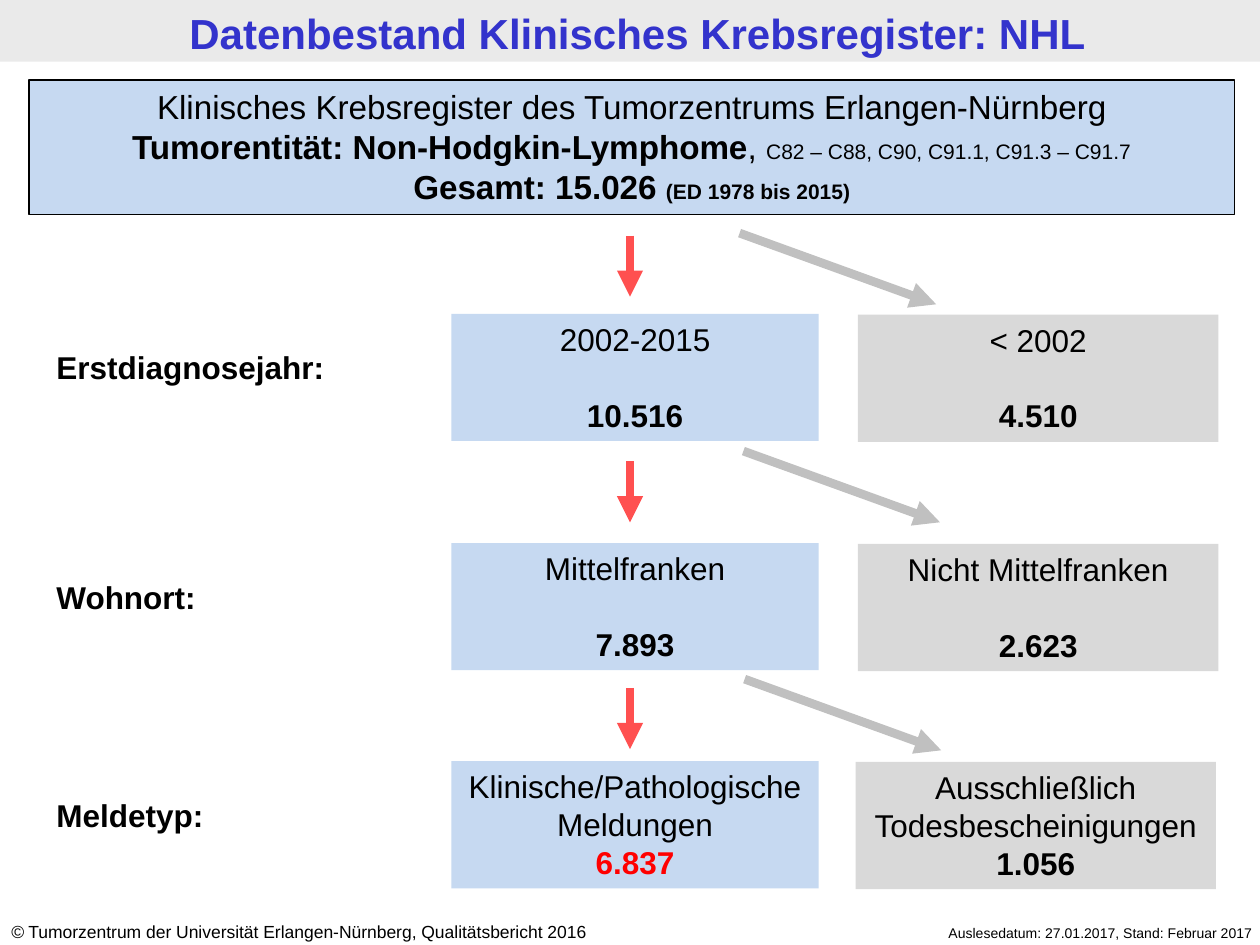
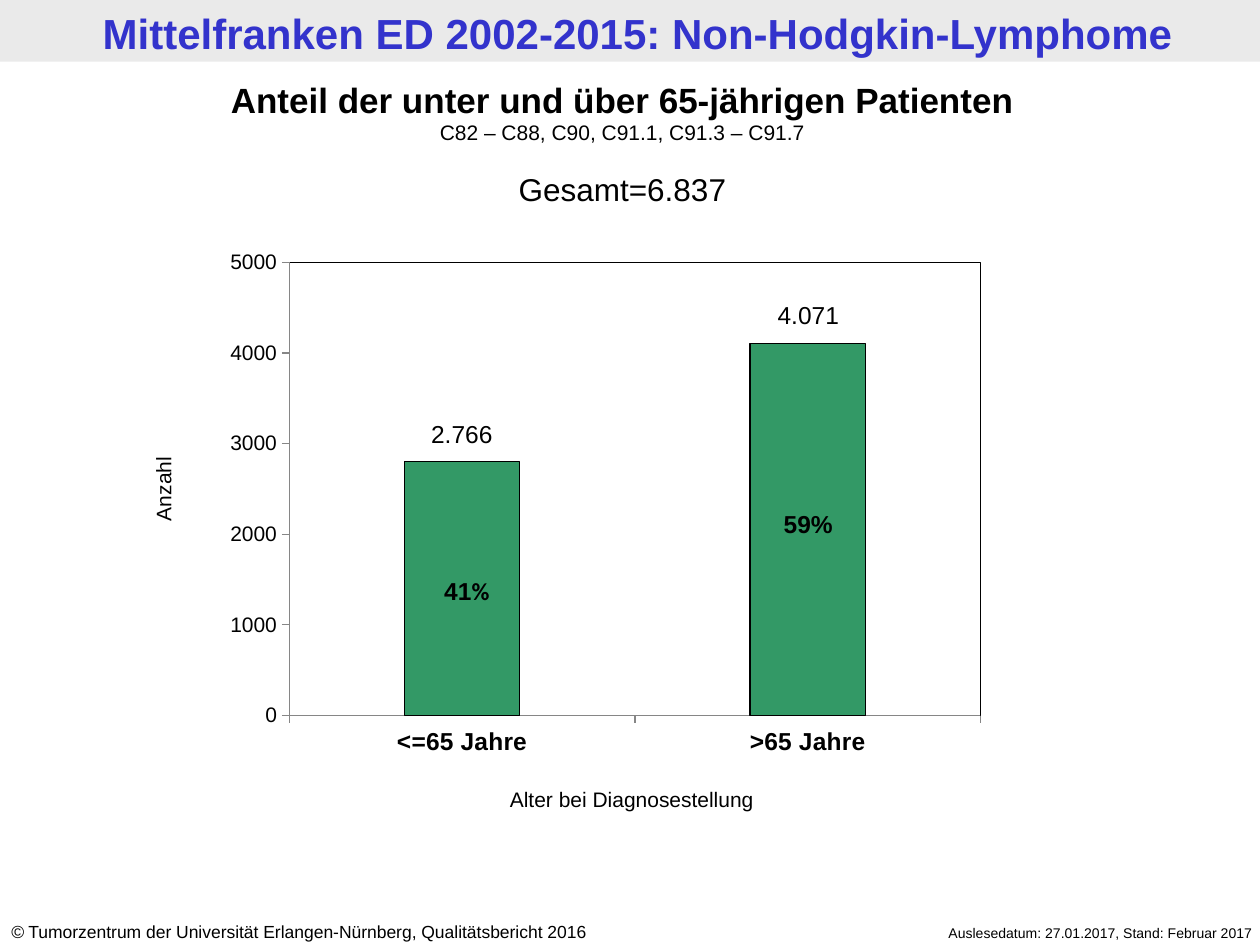
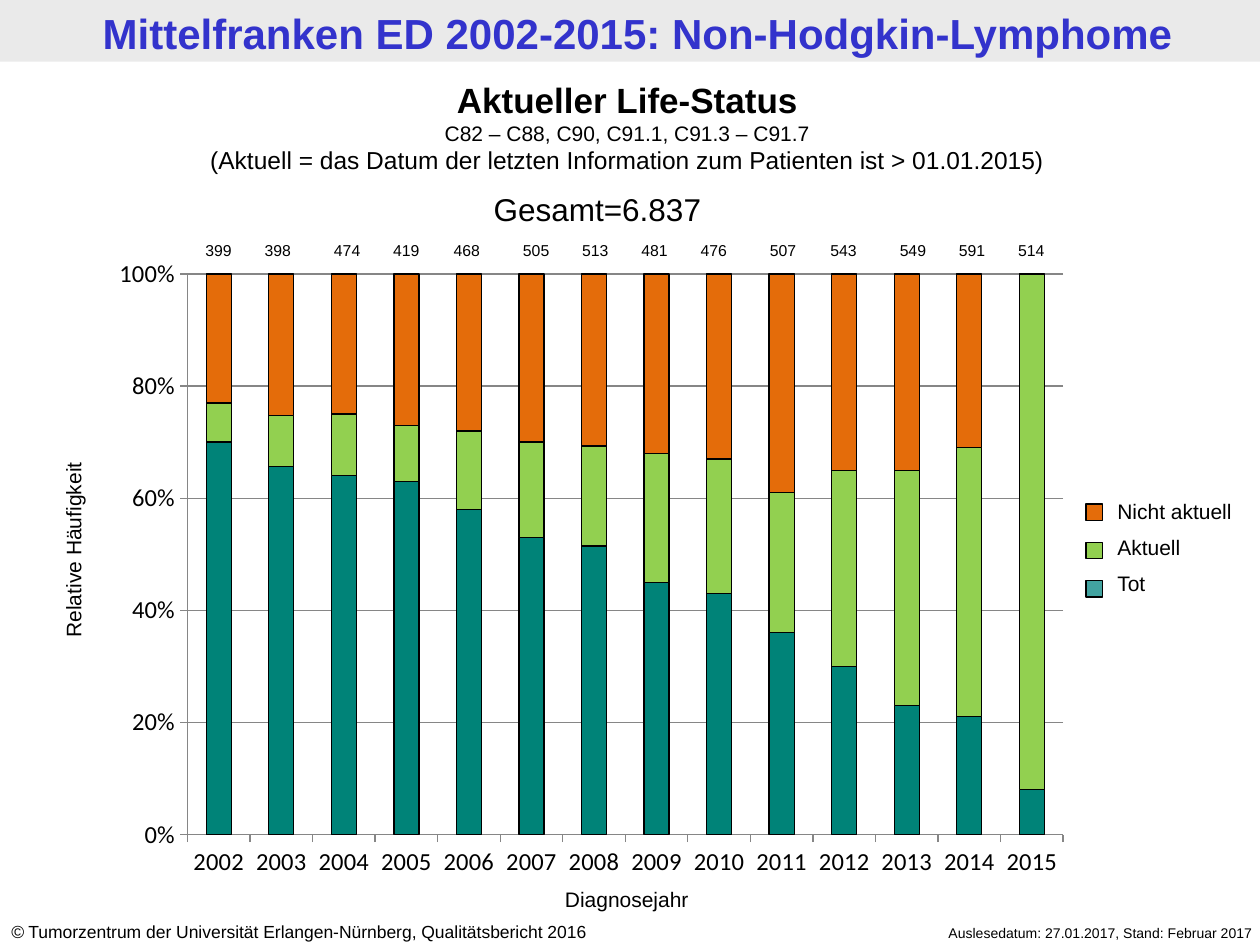
from dataclasses import dataclass
from typing import NamedTuple, Optional

from lxml.etree import SubElement
from pptx import Presentation
from pptx.chart.axis import CategoryAxis, ValueAxis
from pptx.chart.chart import Chart
from pptx.chart.data import CategoryChartData
from pptx.dml.color import RGBColor
from pptx.enum.chart import XL_CHART_TYPE as ChartType, XL_TICK_MARK as TickMark
from pptx.enum.shapes import MSO_CONNECTOR as Connector, MSO_SHAPE as Shape
from pptx.enum.text import MSO_ANCHOR as Anchor, MSO_AUTO_SIZE as AutoSize, PP_ALIGN as Align
from pptx.oxml import parse_xml
from pptx.oxml.ns import nsdecls, qn
from pptx.shapes.autoshape import Shape as Box
from pptx.slide import Slide
from pptx.util import Inches, Pt

BLACK = RGBColor(0x00, 0x00, 0x00)
RED = RGBColor(0xFF, 0x00, 0x00)
TITLE_BLUE = RGBColor(0x33, 0x33, 0xCC)
BAND_GREY = RGBColor(0xEA, 0xEA, 0xEA)
KEPT_BLUE = RGBColor(0xC6, 0xD9, 0xF1)
EXCLUDED_GREY = RGBColor(0xD9, 0xD9, 0xD9)
KEPT_ARROW = RGBColor(0xFF, 0x50, 0x50)
EXCLUDED_ARROW = RGBColor(0xC0, 0xC0, 0xC0)
AXIS_GREY = RGBColor(0x86, 0x86, 0x86)
AGE_GREEN = RGBColor(0x33, 0x99, 0x66)
DEAD_TEAL = RGBColor(0x00, 0x83, 0x78)
DEAD_KEY_TEAL = RGBColor(0x00, 0x83, 0x80)
CURRENT_GREEN = RGBColor(0x92, 0xD0, 0x50)
OUTDATED_ORANGE = RGBColor(0xE4, 0x6C, 0x0A)

ARIAL = "Arial"
CALIBRI = "Calibri"
SLIDE_WIDTH = Inches(10)
SLIDE_HEIGHT = Inches(7.5)
COLUMN = SLIDE_WIDTH // 100
ROW = SLIDE_HEIGHT // 75
LINE_HEIGHT = 1.2

ICD_CODES = "C82 – C88, C90, C91.1, C91.3 – C91.7"
TOTAL = "Gesamt=6.837"
COHORT_TITLE = "Mittelfranken ED 2002-2015: Non-Hodgkin-Lymphome"


class Place(NamedTuple):
    left: float
    top: float
    width: float
    height: float

    def lengths(self) -> tuple[int, int, int, int]:
        return (round(self.left * COLUMN), round(self.top * ROW),
                round(self.width * COLUMN), round(self.height * ROW))


@dataclass(frozen=True)
class Span:
    text: str
    size: float = 18
    bold: bool = False
    italic: bool = False
    color: RGBColor = BLACK
    font: str = ARIAL


class Line(NamedTuple):
    spans: tuple[Span, ...]
    before: float = 0


class Stage(NamedTuple):
    label: str
    kept: str
    kept_count: Span
    excluded: str
    excluded_count: str
    top: float
    excluded_left: float
    count_gap: float
    kept_arrow_top: float
    excluded_arrow: tuple[float, float]


class Series(NamedTuple):
    name: str
    color: RGBColor
    values: tuple[Optional[int], ...]


class AxisStyle(NamedTuple):
    size: float
    font: str
    bold: bool = False


def line(text: str, before: float = 0, **style) -> Line:
    return Line((Span(text, **style),), before)


def write(box: Box, lines: list[Line], align: Align = Align.CENTER) -> None:
    frame = box.text_frame
    frame.word_wrap = True
    frame.auto_size = AutoSize.SHAPE_TO_FIT_TEXT
    frame.vertical_anchor = Anchor.TOP
    for index, content in enumerate(lines):
        para = frame.add_paragraph() if index else frame.paragraphs[0]
        para.alignment = align
        if content.before:
            para.space_before = Pt(content.before)
        for part in content.spans:
            span = para.add_run()
            span.text = part.text
            span.font.size = Pt(part.size)
            span.font.bold = part.bold
            span.font.italic = part.italic
            span.font.name = part.font
            span.font.color.rgb = part.color


def add_text(page: Slide, place: Place, *lines: Line, align: Align = Align.CENTER,
             turned: bool = False) -> None:
    box = page.shapes.add_textbox(*place.lengths())
    write(box, list(lines), align)
    if turned:
        box.rotation = 270


def add_rectangle(page: Slide, place: Place, color: RGBColor, *lines: Line,
                  outlined: bool = False) -> Box:
    box = page.shapes.add_shape(Shape.RECTANGLE, *place.lengths())
    box.shadow.inherit = False
    box.fill.solid()
    box.fill.fore_color.rgb = color
    if outlined:
        box.line.color.rgb = BLACK
        box.line.width = Pt(0.75)
    else:
        box.line.fill.background()
    if lines:
        write(box, list(lines))
    return box


def add_arrow(page: Slide, left: float, top: float, run: float, fall: float,
              color: RGBColor) -> None:
    arrow = page.shapes.add_connector(
        Connector.STRAIGHT, round(left * COLUMN), round(top * ROW),
        round((left + run) * COLUMN), round((top + fall) * ROW))
    arrow.line.color.rgb = color
    arrow.line.width = Pt(5)
    properties = arrow.element.spPr
    SubElement(properties.find(qn("a:ln")), qn("a:tailEnd"), type="triangle")
    SubElement(properties, qn("a:effectLst"))


def add_page(deck: Presentation, title: str) -> Slide:
    page = deck.slides.add_slide(deck.slide_layouts[6])
    add_rectangle(page, Place(0, 0, 100, 4.9), BAND_GREY)
    add_text(page, Place(0.6, 0.1, 100, 4.9), line(title, size=24, bold=True, color=TITLE_BLUE))
    add_text(page, Place(-0.1, 72.6, 52.4, 2.7),
             Line((Span("©", size=10, italic=True),
                   Span(" Tumorzentrum der Universität Erlangen-Nürnberg, "
                        "Qualitätsbericht 2016", size=10))), align=Align.LEFT)
    add_text(page, Place(66.5, 72.9, 33.9, 2.4),
             line("Auslesedatum: 27.01.2017, Stand: Februar 2017", size=8), align=Align.RIGHT)
    return page


def style_axis(axis: CategoryAxis | ValueAxis, style: AxisStyle) -> None:
    axis.major_tick_mark = TickMark.OUTSIDE
    axis.minor_tick_mark = TickMark.NONE
    axis.format.line.color.rgb = AXIS_GREY
    font = axis.tick_labels.font
    font.size = Pt(style.size)
    font.name = style.font
    font.bold = style.bold
    font.color.rgb = BLACK


def lay_out_plot(chart: Chart, outer: Place, inner: Place) -> None:
    area = chart.element.find(".//" + qn("c:plotArea"))
    for layout in area.findall(qn("c:layout")):
        area.remove(layout)
    left = (inner.left - outer.left) / outer.width
    top = (inner.top - outer.top) / outer.height
    width = inner.width / outer.width
    height = inner.height / outer.height
    area.insert(0, parse_xml(
        f'<c:layout {nsdecls("c")}><c:manualLayout><c:layoutTarget val="inner"/>'
        '<c:xMode val="edge"/><c:yMode val="edge"/>'
        f'<c:x val="{left}"/><c:y val="{top}"/><c:w val="{width}"/><c:h val="{height}"/>'
        '</c:manualLayout></c:layout>'))


def frame_plot(chart: Chart) -> None:
    chart.element.find(".//" + qn("c:plotArea")).append(parse_xml(
        f'<c:spPr {nsdecls("c", "a")}><a:noFill/><a:ln w="9525"><a:solidFill>'
        f'<a:srgbClr val="{BLACK}"/></a:solidFill></a:ln></c:spPr>'))


def add_columns(page: Slide, outer: Place, inner: Place, kind: ChartType,
                categories: list[str], series: list[Series], gap: int,
                category_style: AxisStyle, value_style: AxisStyle,
                major_unit: float) -> Chart:
    data = CategoryChartData()
    data.categories = categories
    for entry in series:
        data.add_series(entry.name, entry.values)
    chart = page.shapes.add_chart(kind, *outer.lengths(), data).chart
    chart.has_title = False
    chart.has_legend = False
    chart.font.size = Pt(18)
    chart.font.name = CALIBRI
    chart.font.color.rgb = BLACK
    plot = chart.plots[0]
    plot.gap_width = gap
    plot.overlap = 100
    plot.vary_by_categories = False
    for drawn, entry in zip(plot.series, series):
        drawn.format.fill.solid()
        drawn.format.fill.fore_color.rgb = entry.color
        drawn.format.line.color.rgb = BLACK
        drawn.format.line.width = Pt(0.75)
    style_axis(chart.category_axis, category_style)
    style_axis(chart.value_axis, value_style)
    chart.value_axis.major_unit = major_unit
    chart.value_axis.minimum_scale = 0
    chart.value_axis.has_major_gridlines = False
    lay_out_plot(chart, outer, inner)
    return chart


def build_selection(deck: Presentation) -> None:
    page = add_page(deck, "Datenbestand Klinisches Krebsregister: NHL")
    add_rectangle(
        page, Place(2.3, 6.35, 95.7, 10.7), KEPT_BLUE,
        line("Klinisches Krebsregister des Tumorzentrums Erlangen-Nürnberg", size=19),
        Line((Span("Tumorentität: Non-Hodgkin-Lymphome", size=19, bold=True),
              Span(", ", size=19), Span(ICD_CODES, size=12))),
        Line((Span("Gesamt: 15.026 ", size=19, bold=True),
              Span("(ED 1978 bis 2015)", size=12, bold=True))),
        outlined=True)
    skipped_line = 18 * LINE_HEIGHT
    stages = [
        Stage("Erstdiagnosejahr:", "2002-2015", Span("10.516", bold=True), "< 2002", "4.510",
              24.9, 68.1, skipped_line, 18.7, (58.7, 18.5)),
        Stage("Wohnort:", "Mittelfranken", Span("7.893", bold=True), "Nicht Mittelfranken",
              "2.623", 43.1, 68.1, skipped_line, 36.6, (59, 35.8)),
        Stage("Meldetyp:", "Klinische/Pathologische Meldungen",
              Span("6.837", bold=True, color=RED), "Ausschließlich Todesbescheinigungen",
              "1.056", 60.4, 67.9, 0, 54.6, (59.1, 53.9)),
    ]
    for stage in stages:
        add_text(page, Place(3.5, stage.top + 2.25, 27.6, 4),
                 line(stage.label, bold=True), align=Align.LEFT)
        add_rectangle(page, Place(35.83, stage.top, 29.15, 10.1), KEPT_BLUE,
                      line(stage.kept), Line((stage.kept_count,), stage.count_gap))
        add_rectangle(page, Place(stage.excluded_left, stage.top + 0.07, 28.6, 10.1),
                      EXCLUDED_GREY, line(stage.excluded),
                      line(stage.excluded_count, stage.count_gap, bold=True))
        add_arrow(page, 50, stage.kept_arrow_top, 0, 4.85, KEPT_ARROW)
        add_arrow(page, *stage.excluded_arrow, 15.6, 5.65, EXCLUDED_ARROW)


def build_age_groups(deck: Presentation) -> None:
    page = add_page(deck, COHORT_TITLE)
    chart = add_columns(
        page, Place(15.1, 14.2, 69.8, 46.6), Place(22.97, 20.82, 54.86, 35.98),
        ChartType.COLUMN_STACKED, ["<=65 Jahre", ">65 Jahre"],
        [Series("Anzahl", AGE_GREEN, (2800, 4100))],
        200, AxisStyle(14, ARIAL, True), AxisStyle(12, ARIAL), 1000)
    chart.value_axis.maximum_scale = 5000
    frame_plot(chart)
    add_text(page, Place(0, 5.7, 98.8, 11.4),
             line("Anteil der unter und über 65-jährigen Patienten", size=20, bold=True),
             line(ICD_CODES, size=12), line(TOTAL, 12 * LINE_HEIGHT))
    add_text(page, Place(32.7, 45.2, 8.7, 3.4),
             Line((Span("41", size=14, bold=True),
                   Span("%", size=14, bold=True, font=CALIBRI))))
    add_text(page, Place(59.4, 39.9, 9.5, 3.4), line("59%", size=14, bold=True))
    add_text(page, Place(31.9, 32.8, 9.5, 3.4), line("2.766", size=14))
    add_text(page, Place(59.4, 23.3, 9.5, 3.4), line("4.071", size=14))
    add_text(page, Place(33.5, 61.9, 33.3, 3), line("Alter bei Diagnosestellung", size=12))
    add_text(page, Place(-0.1, 37.3, 26.1, 3), line("Anzahl", size=12), turned=True)


def build_life_status(deck: Presentation) -> None:
    page = add_page(deck, COHORT_TITLE)
    series = [
        Series("Tot", DEAD_TEAL, (70, 65, 64, 63, 58, 53, 52, 45, 43, 36, 30, 23, 21, 8)),
        Series("Aktuell", CURRENT_GREEN,
               (7, 9, 11, 10, 14, 17, 18, 23, 24, 25, 35, 42, 48, 92)),
        Series("Nicht aktuell", OUTDATED_ORANGE,
               (23, 25, 25, 27, 28, 30, 31, 32, 33, 39, 35, 35, 31, None)),
    ]
    chart = add_columns(
        page, Place(7.9, 19.5, 78, 51.1), Place(14.88, 21.75, 69.5, 44.5),
        ChartType.COLUMN_STACKED_100, [str(year) for year in range(2002, 2016)], series,
        150, AxisStyle(14, CALIBRI), AxisStyle(14, CALIBRI), 0.2)
    values = chart.value_axis
    values.tick_labels.number_format = "0%"
    values.tick_labels.number_format_is_linked = False
    values.has_major_gridlines = True
    values.major_gridlines.format.line.color.rgb = AXIS_GREY

    add_text(page, Place(-0.4, 5.7, 100.4, 9.1),
             line("Aktueller Life-Status", size=20, bold=True), line(ICD_CODES, size=12),
             line("(Aktuell = das Datum der letzten Information zum Patienten ist > 01.01.2015)",
                  size=14))
    add_text(page, Place(38.2, 14.6, 22, 4), line(TOTAL), align=Align.LEFT)
    add_text(page, Place(-6.2, 42.1, 24.1, 3.1), line("Relative Häufigkeit", size=12),
             turned=True)
    add_text(page, Place(38.5, 69.85, 22.5, 3.1), line("Diagnosejahr", size=12))
    patients = (399, 398, 474, 419, 468, 505, 513, 481, 476, 507, 543, 549, 591, 514)
    lefts = (14.6, 19.3, 24.8, 29.5, 34.3, 39.8, 44.5, 49.2, 53.9, 59.4, 64.2, 69.7, 74.4, 79.1)
    for left, count in zip(lefts, patients):
        add_text(page, Place(left, 18.65, 5.5, 2.5), line(str(count), size=9))

    keys = [entry.name for entry in reversed(series)]
    add_text(page, Place(87.7, 39.1, 12.3, 9.1),
             *(line(key, 6 if index else 0, size=12) for index, key in enumerate(keys)),
             align=Align.LEFT)
    for index, color in enumerate((OUTDATED_ORANGE, CURRENT_GREEN, DEAD_KEY_TEAL)):
        swatch = add_rectangle(page, Place(86.2, 40 + index * 3.05, 1.3, 1.3), color,
                               outlined=True)
        if color == DEAD_KEY_TEAL:
            SubElement(swatch.element.find(".//" + qn("a:srgbClr")), qn("a:alpha"), val="74000")


def main() -> None:
    deck = Presentation()
    deck.slide_width = SLIDE_WIDTH
    deck.slide_height = SLIDE_HEIGHT
    build_selection(deck)
    build_age_groups(deck)
    build_life_status(deck)
    deck.save("out.pptx")


if __name__ == "__main__":
    main()
